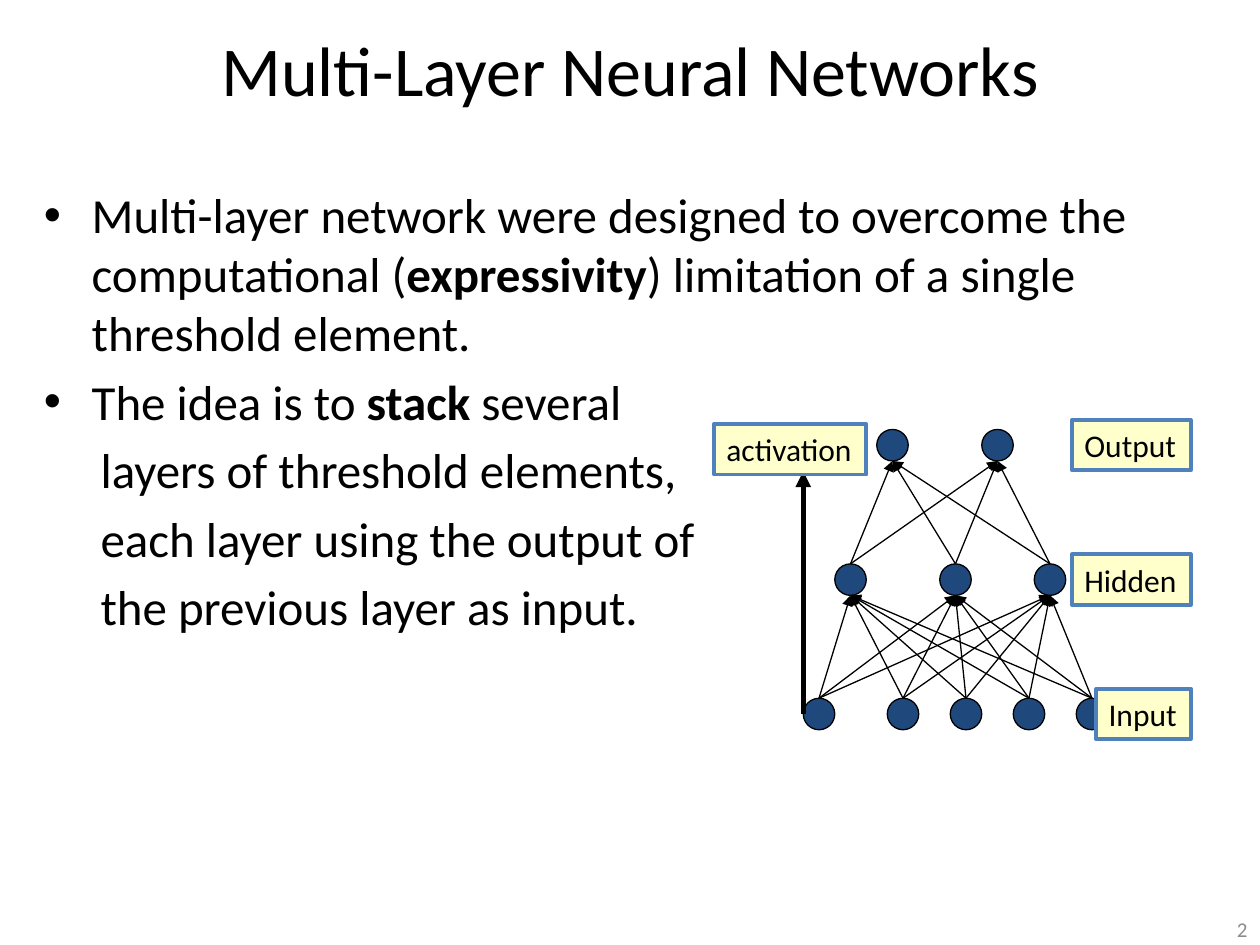
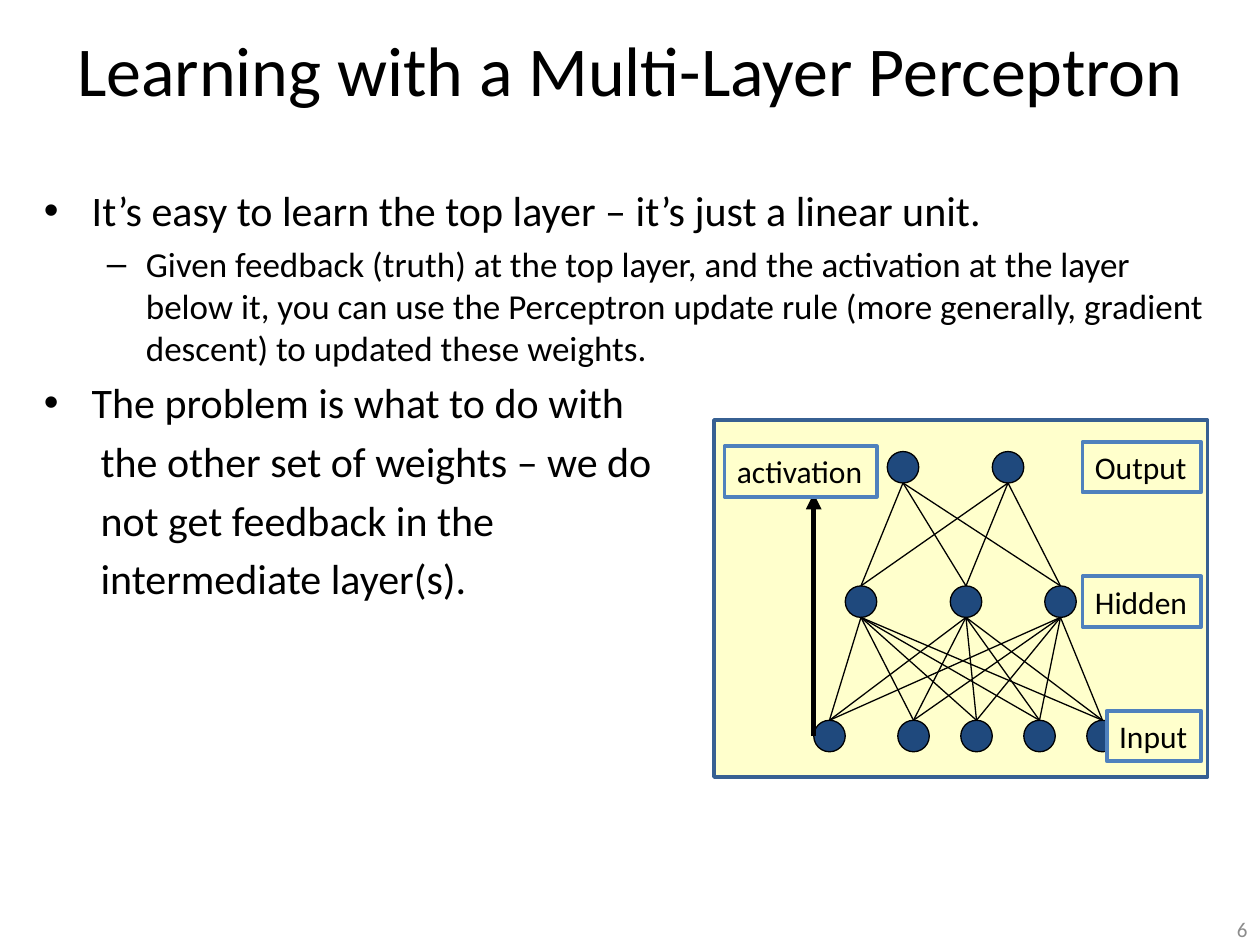
from dataclasses import dataclass
from itertools import pairwise, product

from lxml.etree import SubElement
from pptx import Presentation
from pptx.dml.color import RGBColor
from pptx.enum.shapes import MSO_CONNECTOR, MSO_SHAPE
from pptx.enum.text import MSO_ANCHOR, MSO_AUTO_SIZE, PP_ALIGN
from pptx.oxml.ns import qn
from pptx.util import Emu, Inches, Pt

COLORS = {
    "text": "000000",
    "number": "8C8C8C",
    "node": "1F497D",
    "edge": "000000",
    "cream": "FFFFCC",
    "label_line": "4F81BD",
    "panel_line": "376092",
}
FONT = "Calibri"
WIDTH, HEIGHT = Inches(10), Inches(7.5)
COLS, ROWS = 120, 90
NODE = 3
LABEL_RIGHT, LABEL_HEIGHT = 113.4, 4.8


@dataclass(frozen=True)
class Box:
    col: float
    row: float
    cols: float
    rows: float


@dataclass(frozen=True)
class Layer:
    name: str
    row: float
    centres: tuple[float, ...]
    label_cols: float


@dataclass(frozen=True)
class Para:
    text: str
    size: float
    left: float
    hang: float = 0
    bullet: str = ""


@dataclass(frozen=True)
class Page:
    title: str
    number: str
    paras: tuple[Para, ...]
    shift: tuple[float, float] = (0, 0)
    arrows: bool = False
    panel: bool = False


TITLE = Box(0, 0, COLS, 13)
BODY = Box(3, 17, 114, 69)
NUMBER = Box(92, 87, 28, 3)
PANEL = Box(68, 40, 47, 34)

LAYERS = (
    Layer("Input", 68, (78, 86, 92, 98, 104), 9),
    Layer("Hidden", 55.2, (81, 91, 100), 11.3),
    Layer("Output", 42.4, (85, 95), 11.3),
)


def point(text: str, size: float) -> Para:
    return Para(text, size, 0.38, 0.38, "•")


def detail(text: str, size: float) -> Para:
    return Para(text, size, 0.81, 0.31, "–")


def follow(text: str, size: float) -> Para:
    return Para(text, size, 0.45)


PAGES = (
    Page(
        "Multi-Layer Neural Networks",
        "2",
        (
            point("Multi-layer network were designed to overcome the computational "
                  "(**expressivity**) limitation of a single threshold element.", 28),
            point("The idea is to **stack **several", 28),
            follow("layers of threshold elements,", 28),
            follow("each layer using the output of", 28),
            follow("the previous layer as input.", 28),
        ),
        arrows=True,
    ),
    Page(
        "Learning with a Multi-Layer Perceptron",
        "6",
        (
            point("It’s easy to learn the top layer – it’s just a linear unit.", 24),
            detail("Given feedback (truth) at the top layer, and the activation at the "
                   "layer below it, you can use the Perceptron update rule (more "
                   "generally, gradient descent) to updated these weights.", 20),
            point("The problem is what to do with", 24),
            follow("the other set of weights – we do", 24),
            follow("not get feedback in the", 24),
            follow("intermediate layer(s).", 24),
        ),
        shift=(1, 2.1),
        panel=True,
    ),
)


def x(col: float) -> Emu:
    return Emu(round(WIDTH * col / COLS))


def y(row: float) -> Emu:
    return Emu(round(HEIGHT * row / ROWS))


def frame(box: Box) -> tuple[Emu, Emu, Emu, Emu]:
    return x(box.col), y(box.row), x(box.cols), y(box.rows)


def rgb(name: str) -> RGBColor:
    return RGBColor.from_string(COLORS[name])


def write(p, text: str, *, size: float, color: str = "text", align=PP_ALIGN.LEFT) -> None:
    p.alignment = align
    for i, part in enumerate(text.split("**")):
        r = p.add_run()
        r.text = part
        r.font.name = FONT
        r.font.size = Pt(size)
        r.font.bold = i % 2 == 1
        r.font.color.rgb = rgb(color)


def add_title(s, text: str) -> None:
    sp = s.shapes.title
    sp.left, sp.top, sp.width, sp.height = frame(TITLE)
    sp.text_frame.vertical_anchor = MSO_ANCHOR.MIDDLE
    write(sp.text_frame.paragraphs[0], text, size=40, align=PP_ALIGN.CENTER)


def add_body(s, paras: tuple[Para, ...]) -> None:
    tf = s.shapes.add_textbox(*frame(BODY)).text_frame
    tf.word_wrap = True
    for i, para in enumerate(paras):
        p = tf.add_paragraph() if i else tf.paragraphs[0]
        write(p, para.text, size=para.size)
        p.space_before = Pt(para.size * 0.2)
        pPr = p._p.get_or_add_pPr()
        pPr.set("marL", str(Inches(para.left)))
        pPr.set("indent", str(Inches(-para.hang)))
        if para.bullet:
            SubElement(pPr, qn("a:buFont")).set("typeface", "Arial")
            SubElement(pPr, qn("a:buChar")).set("char", para.bullet)


def add_number(s, text: str) -> None:
    tf = s.shapes.add_textbox(*frame(NUMBER)).text_frame
    tf.word_wrap = True
    tf.vertical_anchor = MSO_ANCHOR.MIDDLE
    write(tf.paragraphs[0], text, size=12, color="number", align=PP_ALIGN.RIGHT)


def add_block(s, kind, box: Box, *, fill: str, line: str, weight: float):
    sp = s.shapes.add_shape(kind, *frame(box))
    sp.shadow.inherit = False
    sp.fill.solid()
    sp.fill.fore_color.rgb = rgb(fill)
    sp.line.color.rgb = rgb(line)
    sp.line.width = Pt(weight)
    return sp


def add_label(s, text: str, box: Box) -> None:
    sp = add_block(s, MSO_SHAPE.RECTANGLE, box, fill="cream", line="label_line", weight=2.25)
    tf = sp.text_frame
    tf.word_wrap = False
    tf.auto_size = MSO_AUTO_SIZE.SHAPE_TO_FIT_TEXT
    tf.vertical_anchor = MSO_ANCHOR.TOP
    write(tf.paragraphs[0], text, size=18)


def add_edge(s, start: tuple[float, float], end: tuple[float, float], *,
             weight: float = 0.75, arrow: bool = False) -> None:
    c = s.shapes.add_connector(MSO_CONNECTOR.STRAIGHT,
                               x(start[0]), y(start[1]), x(end[0]), y(end[1]))
    c.line.color.rgb = rgb("edge")
    c.line.width = Pt(weight)
    if arrow:
        SubElement(c.line._get_or_add_ln(), qn("a:tailEnd")).set("type", "triangle")
    SubElement(c._element.spPr, qn("a:effectLst"))


def add_network(s, shift: tuple[float, float], arrows: bool) -> None:
    dx, dy = shift
    for layer in LAYERS:
        for centre in layer.centres:
            box = Box(centre - NODE / 2 + dx, layer.row - NODE / 2 + dy, NODE, NODE)
            add_block(s, MSO_SHAPE.OVAL, box, fill="node", line="edge", weight=0.75)
    for lower, upper in pairwise(LAYERS):
        for start, end in product(lower.centres, upper.centres):
            add_edge(s, (start + dx, lower.row - NODE / 2 + dy),
                     (end + dx, upper.row + NODE / 2 + dy), arrow=arrows)
    add_edge(s, (76.5 + dx, 68 + dy), (76.5 + dx, 44.9 + dy), weight=3, arrow=True)
    add_label(s, "activation", Box(68 + dx, 40.4 + dy, 14.5, LABEL_HEIGHT))
    for layer in LAYERS:
        add_label(s, layer.name, Box(LABEL_RIGHT - layer.label_cols + dx,
                                     layer.row - LABEL_HEIGHT / 2 + dy,
                                     layer.label_cols, LABEL_HEIGHT))


def add_page(prs, page: Page) -> None:
    s = prs.slides.add_slide(prs.slide_layouts.get_by_name("Title Only"))
    add_title(s, page.title)
    add_body(s, page.paras)
    add_number(s, page.number)
    if page.panel:
        add_block(s, MSO_SHAPE.RECTANGLE, PANEL, fill="cream", line="panel_line", weight=2)
    add_network(s, page.shift, page.arrows)


def main() -> None:
    prs = Presentation()
    prs.slide_width, prs.slide_height = WIDTH, HEIGHT
    for page in PAGES:
        add_page(prs, page)
    prs.save("out.pptx")


if __name__ == "__main__":
    main()
